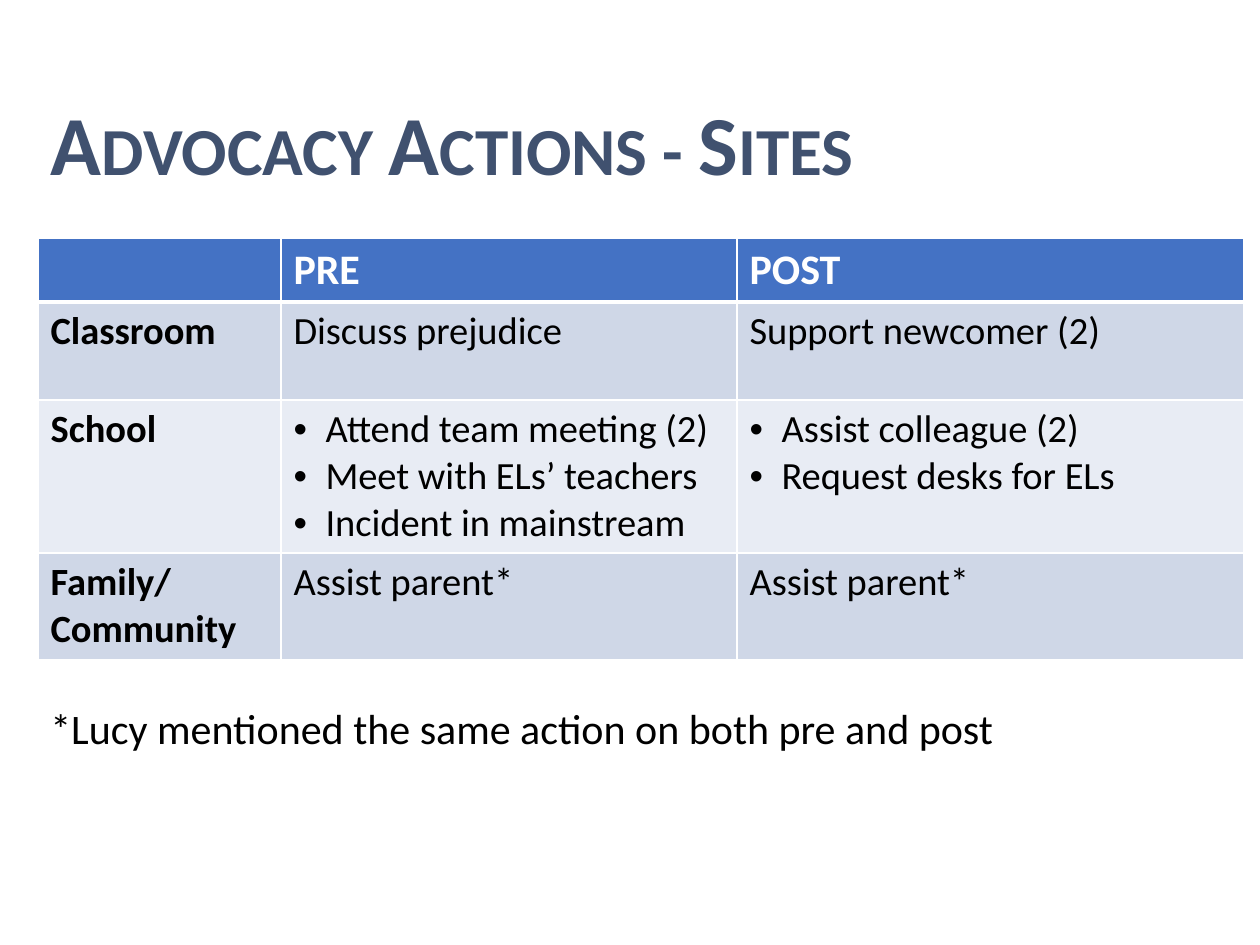
from dataclasses import dataclass

from lxml import etree
from pptx import Presentation
from pptx.dml.color import RGBColor
from pptx.enum.text import MSO_ANCHOR, MSO_AUTO_SIZE, PP_ALIGN
from pptx.oxml.ns import qn
from pptx.util import Emu, Pt

BOTTOM = MSO_ANCHOR.BOTTOM
LEFT = PP_ALIGN.LEFT
GROW = MSO_AUTO_SIZE.SHAPE_TO_FIT_TEXT
NO_FIT = MSO_AUTO_SIZE.NONE

SCALE = 914400 / 126  # EMU in one px
FONT = "Calibri"
WHITE, BLACK, NAVY, BLUE = "FFFFFF", "000000", "40516F", "4472C4"
BANDS = ("CFD7E7", "E8ECF4")
EDGE = 38  # left edge shared by title, table and note
INDENT = 32
COLS = (243, 456, 507)


@dataclass
class Row:
    height: int
    cells: tuple[tuple[str, ...], ...]  # lines of each cell


ROWS = (
    Row(62, ((), ("PRE",), ("POST",))),
    Row(98, (("Classroom",), ("Discuss prejudice",),
             ("Support newcomer (2)",))),
    Row(152, (("School",),
              ("Attend team meeting (2)", "Meet with ELs’ teachers",
               "Incident in mainstream"),
              ("Assist colleague (2)", "Request desks for ELs"))),
    Row(105, (("Family/ Community",), ("Assist parent*",),
              ("Assist parent*",))),
)


def px(n: int) -> Emu:
    return Emu(round(n * SCALE))


def rgb(code: str) -> RGBColor:
    return RGBColor.from_string(code)


def style(para, size: int, color: str, bold: bool = False) -> None:
    font = para.font
    font.name, font.size, font.bold = FONT, Pt(size), bold
    font.color.rgb = rgb(color)


def place(shape, left: int, top: int, width: int, height: int) -> None:
    shape.left, shape.top = px(left), px(top)
    shape.width, shape.height = px(width), px(height)


def bullet(para) -> None:
    props = para._p.get_or_add_pPr()
    props.set("marL", str(px(INDENT)))
    props.set("indent", str(-px(INDENT)))
    face = etree.Element(qn("a:buFont"), typeface="Arial")
    mark = etree.Element(qn("a:buChar"), char="•")
    props.insert(0, face)
    props.insert(1, mark)


def border(cell, head: bool, under: bool) -> None:
    """White rules, thick between the header and the body."""
    props = cell._tc.get_or_add_tcPr()
    wide = {"T": under, "B": head}
    for side in "LRTB":
        width = Pt(3 if wide.get(side) else 1)
        line = etree.SubElement(props, qn(f"a:ln{side}"), w=str(width))
        fill = etree.SubElement(line, qn("a:solidFill"))
        etree.SubElement(fill, qn("a:srgbClr"), val=WHITE)


def write(cell, lines: tuple[str, ...], head: bool, bold: bool) -> None:
    frame = cell.text_frame
    frame.text = "\n".join(lines)
    for para in frame.paragraphs:
        style(para, 24 if head else 22, WHITE if head else BLACK, bold)
        if len(lines) > 1:
            bullet(para)


def add_title(slide) -> None:
    title = slide.shapes.title
    place(title, EDGE, 48, 1154, 157)
    frame = title.text_frame
    frame.text = "Advocacy Actions - Sites"
    frame.auto_size = NO_FIT
    frame.vertical_anchor = BOTTOM
    inset = px(13)
    frame.margin_left = frame.margin_right = inset
    frame.margin_top = frame.margin_bottom = inset
    para = frame.paragraphs[0]
    para.alignment = LEFT
    style(para, 48, NAVY, True)
    para.runs[0]._r.get_or_add_rPr().set("cap", "small")


def add_sites(slide) -> None:
    height = sum(row.height for row in ROWS)
    table = slide.shapes.add_table(
        len(ROWS), len(COLS), px(EDGE), px(238), px(sum(COLS)), px(height)
    ).table
    for col, width in zip(table.columns, COLS):
        col.width = px(width)
    for i, row in enumerate(ROWS):
        table.rows[i].height = px(row.height)
        head = i == 0
        for j, lines in enumerate(row.cells):
            cell = table.cell(i, j)
            write(cell, lines, head, head or j == 0)
            border(cell, head, i == 1)
            cell.fill.solid()
            cell.fill.fore_color.rgb = rgb(BLUE if head else BANDS[(i - 1) % 2])


def add_note(slide) -> None:
    box = slide.shapes.add_textbox(px(EDGE), px(696), px(1186), px(63))
    frame = box.text_frame
    frame.word_wrap = True
    frame.auto_size = GROW
    frame.text = "*Lucy mentioned the same action on both pre and post"
    style(frame.paragraphs[0], 24, BLACK)


def main() -> None:
    deck = Presentation()
    deck.slide_width, deck.slide_height = px(1260), px(945)
    slide = deck.slides.add_slide(deck.slide_layouts[5])  # title only
    add_title(slide)
    add_sites(slide)
    add_note(slide)
    deck.save("out.pptx")


if __name__ == "__main__":
    main()
